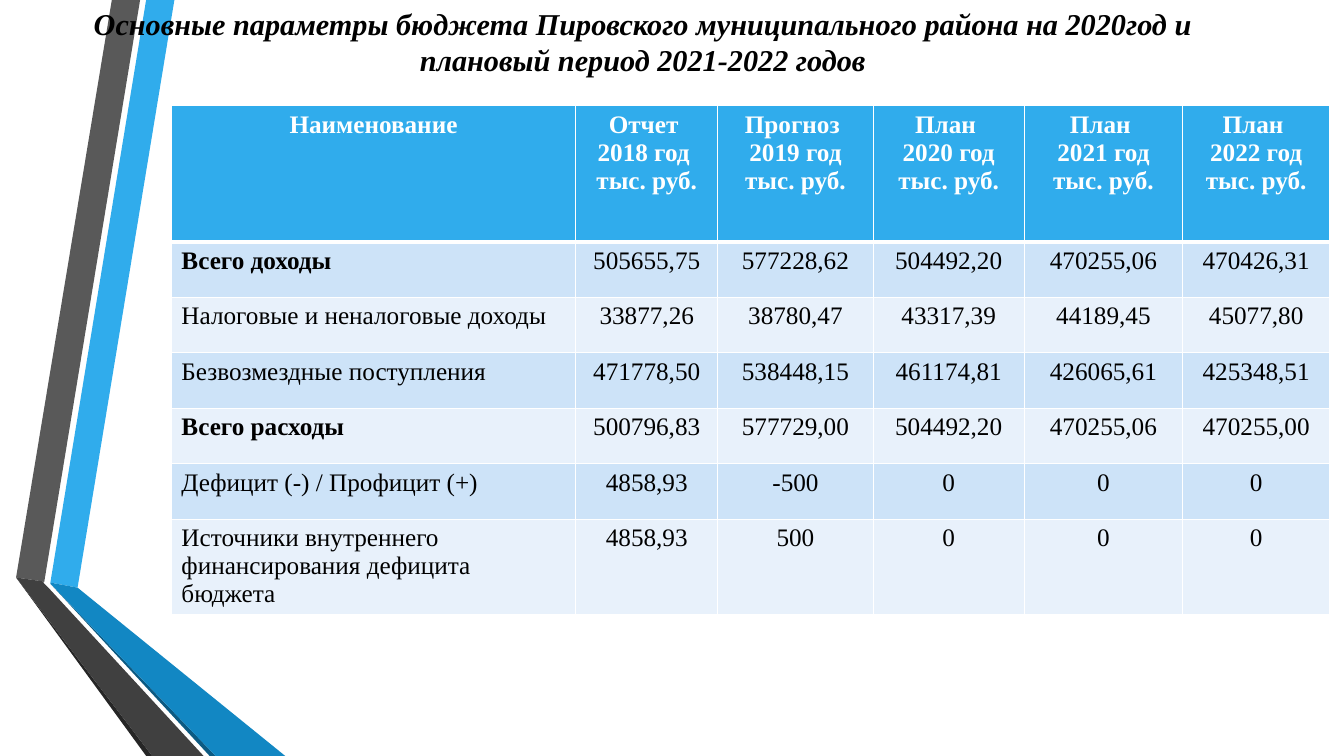
from dataclasses import dataclass

from lxml import etree
from pptx import Presentation
from pptx.dml.color import RGBColor
from pptx.enum.text import MSO_ANCHOR, MSO_AUTO_SIZE, PP_ALIGN
from pptx.oxml.ns import qn
from pptx.util import Pt

PX = 9144
CENTER, LEFT = PP_ALIGN.CENTER, PP_ALIGN.LEFT
MIDDLE, NO_FIT = MSO_ANCHOR.MIDDLE, MSO_AUTO_SIZE.NONE

FONT = "Times New Roman"
BLACK = RGBColor(0x00, 0x00, 0x00)
WHITE = RGBColor(0xFF, 0xFF, 0xFF)
BLUE = RGBColor(0x30, 0xAC, 0xEC)
MID_BLUE = RGBColor(0x12, 0x87, 0xC3)
DEEP_BLUE = RGBColor(0x0C, 0x5A, 0x82)
GREY = RGBColor(0x59, 0x59, 0x59)
DARK_GREY = RGBColor(0x40, 0x40, 0x40)
DEEP_GREY = RGBColor(0x26, 0x26, 0x26)
BANDS = (RGBColor(0xCD, 0xE3, 0xF8), RGBColor(0xE8, 0xF1, 0xFB))

TITLE = ("Основные параметры бюджета Пировского муниципального района "
         "на 2020год и плановый период 2021-2022 годов")
TITLE_FONT = {"name": FONT, "size": Pt(21.6), "bold": True, "italic": True}
CELL_FONT = {"name": FONT, "size": Pt(18)}


@dataclass
class Ribbon:
    color: RGBColor
    points: list[tuple[int, int]]


@dataclass
class BudgetRow:
    name: str
    values: list[str]
    height: int = 55
    bold: bool = False


RIBBONS = [
    Ribbon(BLUE, [(50, 578), (77, 583), (173, 0), (145, 0)]),
    Ribbon(GREY, [(139, 0), (111, 0), (16, 573), (44, 577)]),
    Ribbon(DEEP_GREY, [(16, 573), (145, 750), (151, 750)]),
    Ribbon(DEEP_BLUE, [(50, 579), (208, 750), (214, 750)]),
    Ribbon(MID_BLUE, [(50, 579), (214, 750), (283, 750), (77, 583), (50, 578)]),
    Ribbon(DARK_GREY, [(202, 750), (48, 583), (43, 578), (44, 577), (16, 573), (151, 750)]),
]

HEADER_HEIGHT = 135
COLUMN_WIDTHS = [401, 141, 154, 150, 157, 146]
HEADERS = [
    "Наименование",
    "Отчет \n2018 год \nтыс. руб.",
    "Прогноз \n2019 год\nтыс. руб.",
    *(f"План \n{year} год\nтыс. руб." for year in (2020, 2021, 2022)),
]
ROWS = [
    BudgetRow("Всего доходы",
              ["505655,75", "577228,62", "504492,20", "470255,06", "470426,31"], bold=True),
    BudgetRow("Налоговые и неналоговые доходы",
              ["33877,26", "38780,47", "43317,39", "44189,45", "45077,80"]),
    BudgetRow("Безвозмездные поступления",
              ["471778,50", "538448,15", "461174,81", "426065,61", "425348,51"]),
    BudgetRow("Всего расходы",
              ["500796,83", "577729,00", "504492,20", "470255,06", "470255,00"], bold=True),
    BudgetRow("Дефицит (-) / Профицит (+)", ["4858,93", "-500", "0", "0", "0"]),
    BudgetRow("Источники внутреннего финансирования дефицита бюджета",
              ["4858,93", "500", "0", "0", "0"], height=95),
]


def set_text(tf, text: str, align, color: RGBColor, formats: dict) -> None:
    tf.text = text
    for p in tf.paragraphs:
        p.alignment = align
        for r in p.runs:
            r.font.color.rgb = color
            for key, value in formats.items():
                setattr(r.font, key, value)


def draw_ribbon(s, ribbon: Ribbon) -> None:
    (x, y), *rest = ribbon.points
    builder = s.shapes.build_freeform(x, y, scale=PX)
    builder.add_line_segments(rest, close=True)
    sp = builder.convert_to_shape()
    sp.shadow.inherit = False
    sp.fill.solid()
    sp.fill.fore_color.rgb = ribbon.color
    sp.line.fill.background()


def draw_title(s) -> None:
    sp = s.shapes.title
    s.shapes.element.append(sp.element)
    box = {"left": 17, "top": 5, "width": 1241, "height": 72}
    for key, value in box.items():
        setattr(sp, key, value * PX)
    tf = sp.text_frame
    settings = {"word_wrap": True, "auto_size": NO_FIT, "vertical_anchor": MIDDLE,
                "margin_left": 30 * PX, "margin_right": 30 * PX,
                "margin_top": 0, "margin_bottom": 0}
    for key, value in settings.items():
        setattr(tf, key, value)
    set_text(tf, TITLE, CENTER, BLACK, TITLE_FONT)


def set_borders(cell, top: int, bottom: int) -> None:
    props = cell._tc.get_or_add_tcPr()
    for side, width in {"L": 1, "R": 1, "T": top, "B": bottom}.items():
        ln = etree.SubElement(props, qn(f"a:ln{side}"), w=str(Pt(width)))
        fill = etree.SubElement(ln, qn("a:solidFill"))
        etree.SubElement(fill, qn("a:srgbClr"), val=str(WHITE))


def draw_cell(cell, text: str, align, color: RGBColor, fill: RGBColor, bold: bool,
              top: int = 1, bottom: int = 1) -> None:
    set_text(cell.text_frame, text, align, color, CELL_FONT | {"bold": bold})
    set_borders(cell, top, bottom)
    cell.fill.solid()
    cell.fill.fore_color.rgb = fill


def draw_table(s) -> None:
    heights = [HEADER_HEIGHT, *(row.height for row in ROWS)]
    table = s.shapes.add_table(len(heights), len(COLUMN_WIDTHS), 170 * PX, 105 * PX,
                               sum(COLUMN_WIDTHS) * PX, sum(heights) * PX).table
    for column, width in zip(table.columns, COLUMN_WIDTHS):
        column.width = width * PX
    for line, height in zip(table.rows, heights):
        line.height = height * PX
    for j, text in enumerate(HEADERS):
        draw_cell(table.cell(0, j), text, CENTER, WHITE, BLUE, True, bottom=3)
    for i, row in enumerate(ROWS, start=1):
        for j, text in enumerate([row.name, *row.values]):
            draw_cell(table.cell(i, j), text, CENTER if j else LEFT, BLACK,
                      BANDS[(i - 1) % 2], row.bold and j == 0, top=3 if i == 1 else 1)


def main() -> None:
    prs = Presentation()
    prs.slide_width, prs.slide_height = 1333 * PX, 750 * PX
    s = prs.slides.add_slide(prs.slide_layouts.get_by_name("Title Only"))
    for ribbon in RIBBONS:
        draw_ribbon(s, ribbon)
    draw_title(s)
    draw_table(s)
    prs.save("out.pptx")


if __name__ == "__main__":
    main()
